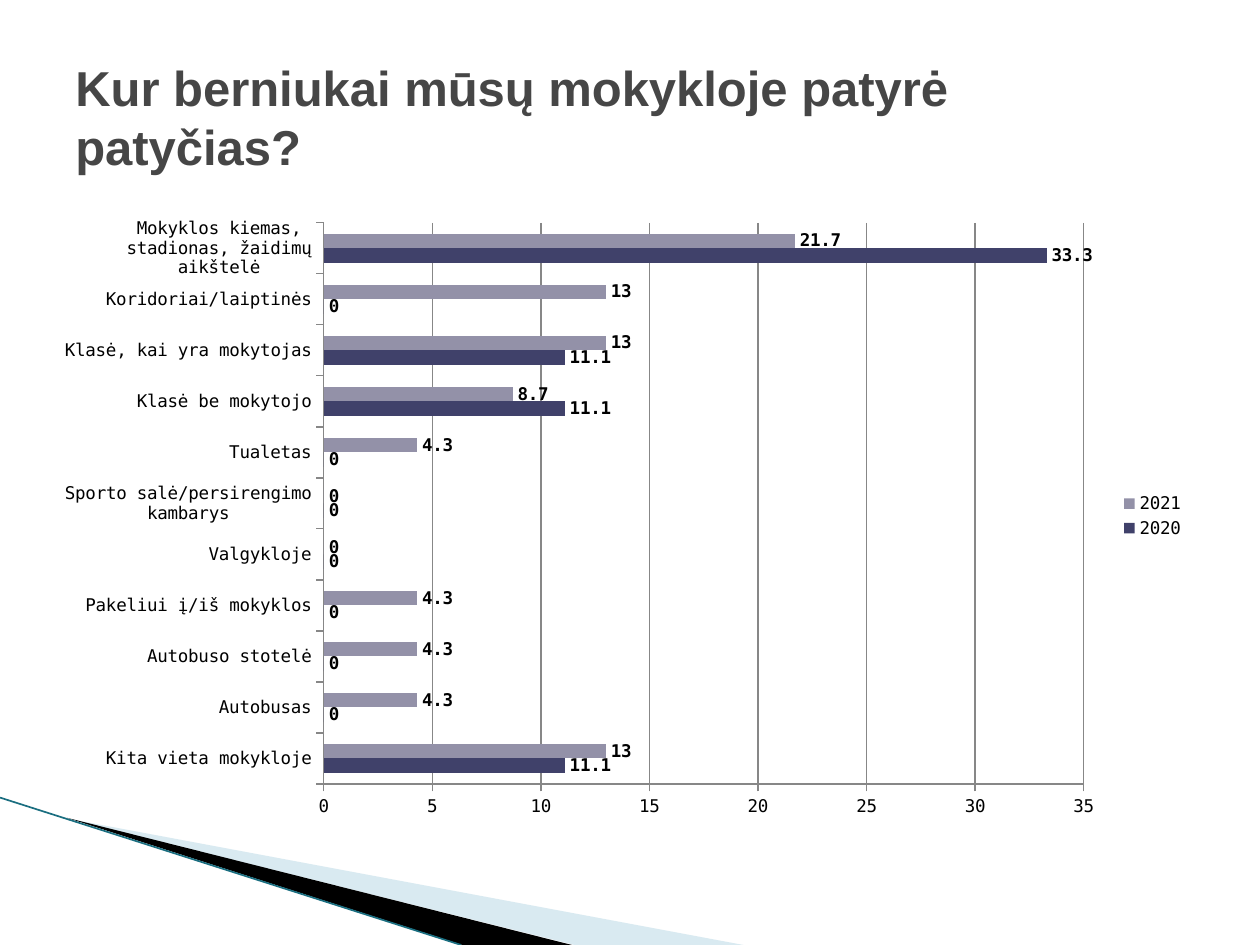
from lxml import etree
from pptx import Presentation
from pptx.chart.data import CategoryChartData
from pptx.dml.color import RGBColor
from pptx.enum.chart import XL_CHART_TYPE, XL_LABEL_POSITION, XL_LEGEND_POSITION, XL_TICK_MARK
from pptx.enum.shapes import MSO_CONNECTOR
from pptx.enum.text import MSO_ANCHOR
from pptx.oxml.ns import qn
from pptx.util import Inches, Pt

BAR = XL_CHART_TYPE.BAR_CLUSTERED
OUTSIDE_END = XL_LABEL_POSITION.OUTSIDE_END
RIGHT = XL_LEGEND_POSITION.RIGHT
TICK_OUT = XL_TICK_MARK.OUTSIDE
STRAIGHT = MSO_CONNECTOR.STRAIGHT
MIDDLE = MSO_ANCHOR.MIDDLE

BLACK = RGBColor(0x00, 0x00, 0x00)
GREY = RGBColor(0x46, 0x46, 0x46)
GRID = RGBColor(0x87, 0x87, 0x87)
NAVY = RGBColor(0x40, 0x41, 0x6A)
LILAC = RGBColor(0x93, 0x91, 0xA8)
PALE_BLUE = RGBColor(0xA0, 0xCB, 0xDC)
TEAL = RGBColor(0x1A, 0x6E, 0x80)

# Content
TITLE = "Kur berniukai mūsų mokykloje patyrė patyčias?"
SERIES = [("2020", NAVY), ("2021", LILAC)]
PLACES = [  # bottom to top: place, 2020, 2021
    ("Kita vieta mokykloje", 11.1, 13),
    ("Autobusas", 0, 4.3),
    ("Autobuso stotelė", 0, 4.3),
    ("Pakeliui į/iš mokyklos", 0, 4.3),
    ("Valgykloje", 0, 0),
    ("Sporto salė/persirengimo kambarys", 0, 0),
    ("Tualetas", 0, 4.3),
    ("Klasė be mokytojo", 11.1, 8.7),
    ("Klasė, kai yra mokytojas", 11.1, 13),
    ("Koridoriai/laiptinės", 0, 13),
    ("Mokyklos kiemas, stadionas, žaidimų aikštelė", 33.3, 21.7),
]
WEDGES = [  # corners in inches, colour, opacity in percent
    ([(0.55, 6.5), (5.9, 7.5), (4.56, 7.5)], PALE_BLUE, 40),
    ([(0.53, 6.49), (4.54, 7.5), (3.67, 7.5)], BLACK, 100),
]
PLOT = {"x": 0.23, "y": 0.03, "w": 0.67, "h": 0.9}  # shares of the chart

prs = Presentation()
prs.slide_width, prs.slide_height = Inches(10), Inches(7.5)
s = prs.slides.add_slide(prs.slide_layouts[6])


def add_text(text, left, top, width, height, *, size, font, color, bold=False):
    box = s.shapes.add_textbox(*map(Inches, (left, top, width, height)))
    tf = box.text_frame
    tf.word_wrap = True
    tf.vertical_anchor = MIDDLE
    r = tf.paragraphs[0].add_run()
    r.text = text
    r.font.size, r.font.name, r.font.bold = Pt(size), font, bold
    r.font.color.rgb = color


def add_wedge(corners, color, opacity):
    points = [(Inches(x), Inches(y)) for x, y in corners]
    builder = s.shapes.build_freeform(*points[0])
    builder.add_line_segments(points[1:], close=True)
    sp = builder.convert_to_shape()
    sp.shadow.inherit = False
    sp.fill.solid()
    sp.fill.fore_color.rgb = color
    sp.line.fill.background()
    if opacity < 100:
        clr = sp.fill._xPr.find(".//" + qn("a:srgbClr"))
        etree.SubElement(clr, qn("a:alpha"), val=str(opacity * 1000))


# Corner decoration
for wedge in WEDGES:
    add_wedge(*wedge)
edge = s.shapes.add_connector(STRAIGHT, 0, Inches(6.33), Inches(3.66), Inches(7.5))
edge.line.color.rgb = TEAL
edge.line.width = Pt(0.95)
etree.SubElement(edge._element.spPr, qn("a:effectLst"))

# Chart
data = CategoryChartData()
data.categories = [place[0] for place in PLACES]
for i, (year, _) in enumerate(SERIES, start=1):
    data.add_series(year, [place[i] for place in PLACES])
chart = s.shapes.add_chart(
    BAR, Inches(0.5), Inches(1.62), Inches(9), Inches(4.95), data).chart
chart.has_title = False
chart.font.size, chart.font.name = Pt(10), "DejaVu Sans Mono"
chart.font.color.rgb = BLACK
chart.has_legend = True
chart.legend.position = RIGHT
chart.legend.include_in_layout = False

# Bars and their labels
plot = chart.plots[0]
plot.gap_width, plot.overlap = 150, 0
plot.vary_by_categories = False
for series, (_, color) in zip(plot.series, SERIES):
    series.format.fill.solid()
    series.format.fill.fore_color.rgb = color
    labels = series.data_labels
    labels.show_value = True
    labels.position = OUTSIDE_END
    labels.font.size, labels.font.bold = Pt(10), True
    labels.font.name = "DejaVu Sans Mono"
    labels.font.color.rgb = BLACK

# Axes
values = chart.value_axis
values.minimum_scale, values.maximum_scale, values.major_unit = 0, 35, 5
values.has_major_gridlines = True
values.major_gridlines.format.line.color.rgb = GRID
for axis in (values, chart.category_axis):
    axis.major_tick_mark = TICK_OUT
    axis.format.line.color.rgb = GRID

# Plot area position
area = chart._chartSpace.find(".//" + qn("c:plotArea"))
for old in area.findall(qn("c:layout")):
    area.remove(old)
layout = etree.Element(qn("c:layout"))
area.insert(0, layout)
manual = etree.SubElement(layout, qn("c:manualLayout"))
settings = {"layoutTarget": "inner", "xMode": "edge", "yMode": "edge", **PLOT}
for tag, val in settings.items():
    etree.SubElement(manual, qn("c:" + tag), val=str(val))

# Title
add_text(TITLE, 0.5, 0.3, 9, 1.25, size=28, font="Arial", color=GREY, bold=True)

prs.save("out.pptx")
